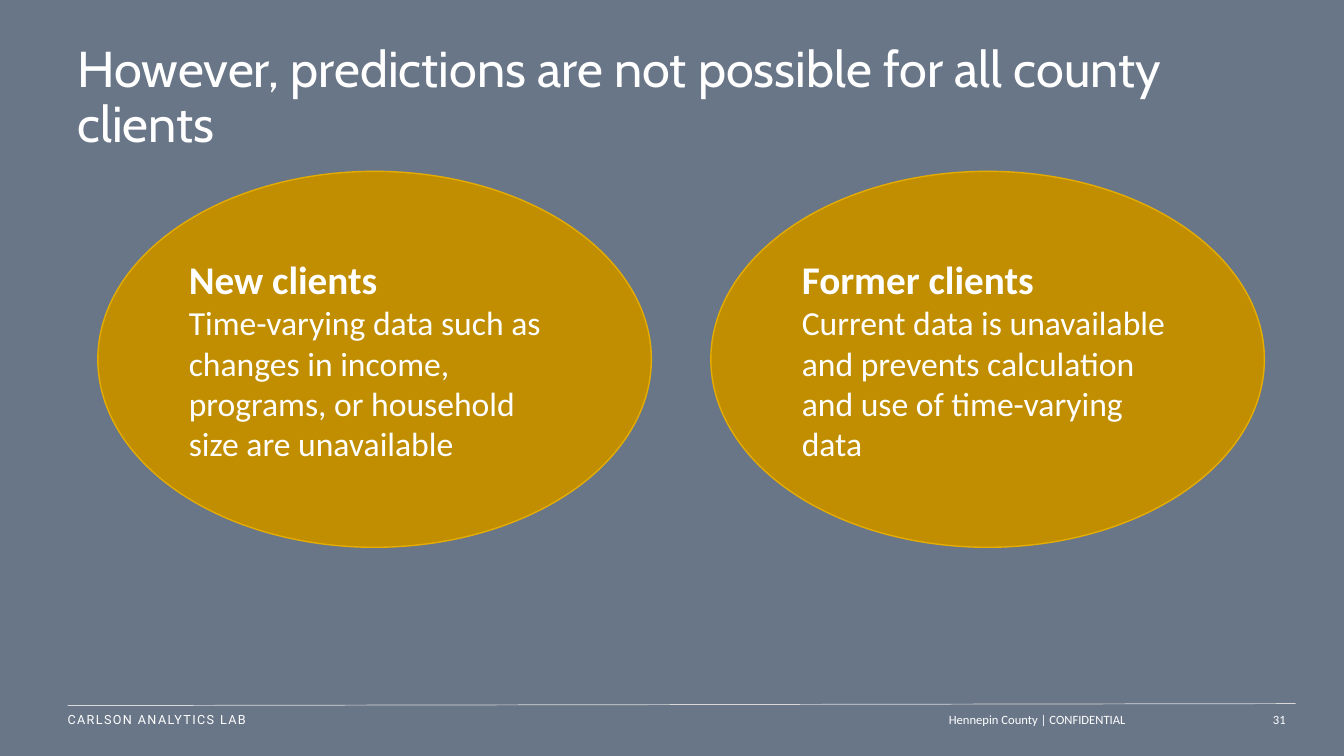
from lxml import etree
from pptx import Presentation
from pptx.dml.color import RGBColor
from pptx.enum.shapes import MSO_CONNECTOR, MSO_SHAPE
from pptx.enum.text import MSO_ANCHOR, PP_ALIGN
from pptx.oxml.ns import qn
from pptx.util import Inches, Pt

LEFT, RIGHT = PP_ALIGN.LEFT, PP_ALIGN.RIGHT
MIDDLE = MSO_ANCHOR.MIDDLE
OVAL, STRAIGHT = MSO_SHAPE.OVAL, MSO_CONNECTOR.STRAIGHT

WIDTH, HEIGHT = 13.33, 7.5
MARGIN = 0.67
FOOTER_TOP, FOOTER_HEIGHT, FOOTER_RIGHT = 6.98, 0.32, 12.85
OVAL_LEFT, OVAL_TOP, OVAL_PITCH = 0.97, 1.7, 6.08
OVAL_WIDTH, OVAL_HEIGHT = 5.49, 3.73

CLIENT_GROUPS = [
    ("New clients",
     "Time-varying data such as changes in income, programs, or household size are unavailable"),
    ("Former clients",
     "Current data is unavailable and prevents calculation and use of time-varying data"),
]


def color(hex_string):
    return RGBColor.from_string(hex_string)


def add_run(p, text, size, font="Calibri", bold=False):
    r = p.add_run()
    r.text = text
    r.font.name = font
    r.font.size = Pt(size)
    r.font.bold = bold
    r.font.color.rgb = color("FFFFFF")
    return r


def add_text(s, box, text, size, font="Calibri", align=LEFT, inset=0.1):
    """Add a one-paragraph text box and return its paragraph."""
    tf = s.shapes.add_textbox(*map(Inches, box)).text_frame
    tf.word_wrap = True
    tf.vertical_anchor = MIDDLE
    tf.margin_left = Inches(inset)
    p = tf.paragraphs[0]
    p.alignment = align
    add_run(p, text, size, font)
    return p


def add_client_oval(s, column, heading, detail):
    left = OVAL_LEFT + column * OVAL_PITCH
    sp = s.shapes.add_shape(OVAL, *map(Inches, (left, OVAL_TOP, OVAL_WIDTH, OVAL_HEIGHT)))
    sp.shadow.inherit = False
    sp.fill.solid()
    sp.fill.fore_color.rgb = color("C08E00")
    sp.line.color.rgb = color("E5AC00")
    sp.line.width = Pt(1)
    tf = sp.text_frame
    tf.word_wrap = True
    tf.vertical_anchor = MIDDLE
    p = tf.paragraphs[0]
    p.alignment = LEFT
    add_run(p, heading, 28, bold=True)
    p = tf.add_paragraph()
    p.alignment = LEFT
    add_run(p, detail, 24)


def add_footer(s):
    p = add_text(s, (MARGIN, FOOTER_TOP, 3.24, FOOTER_HEIGHT),
                 "CARLSON ANALYTICS LAB", 9, "Roboto", inset=0)
    p.runs[0].font._element.set("spc", "100")
    ends = (MARGIN, 7, FOOTER_RIGHT, FOOTER_TOP)
    rule = s.shapes.add_connector(STRAIGHT, *map(Inches, ends))
    rule.line.color.rgb = color("D9D9D9")
    rule.line.width = Pt(0.5)
    etree.SubElement(rule._element.spPr, qn("a:effectLst"))
    add_text(s, (5.32, FOOTER_TOP, 5.94, FOOTER_HEIGHT),
             "Hennepin County | CONFIDENTIAL", 9, align=RIGHT)
    add_text(s, (FOOTER_RIGHT - 0.45, FOOTER_TOP, 0.45, FOOTER_HEIGHT),
             "31", 9, align=RIGHT, inset=0)


def main():
    prs = Presentation()
    prs.slide_width, prs.slide_height = Inches(WIDTH), Inches(HEIGHT)
    s = prs.slides.add_slide(prs.slide_layouts[6])
    s.background.fill.solid()
    s.background.fill.fore_color.rgb = color("697688")
    title = add_text(s, (MARGIN, 0.43, 11.2, 1.1),
                     "However, predictions are not possible for all county clients", 36, "Cabin")
    title.line_spacing = 0.9
    for column, (heading, detail) in enumerate(CLIENT_GROUPS):
        add_client_oval(s, column, heading, detail)
    add_footer(s)
    prs.save("out.pptx")


if __name__ == "__main__":
    main()
